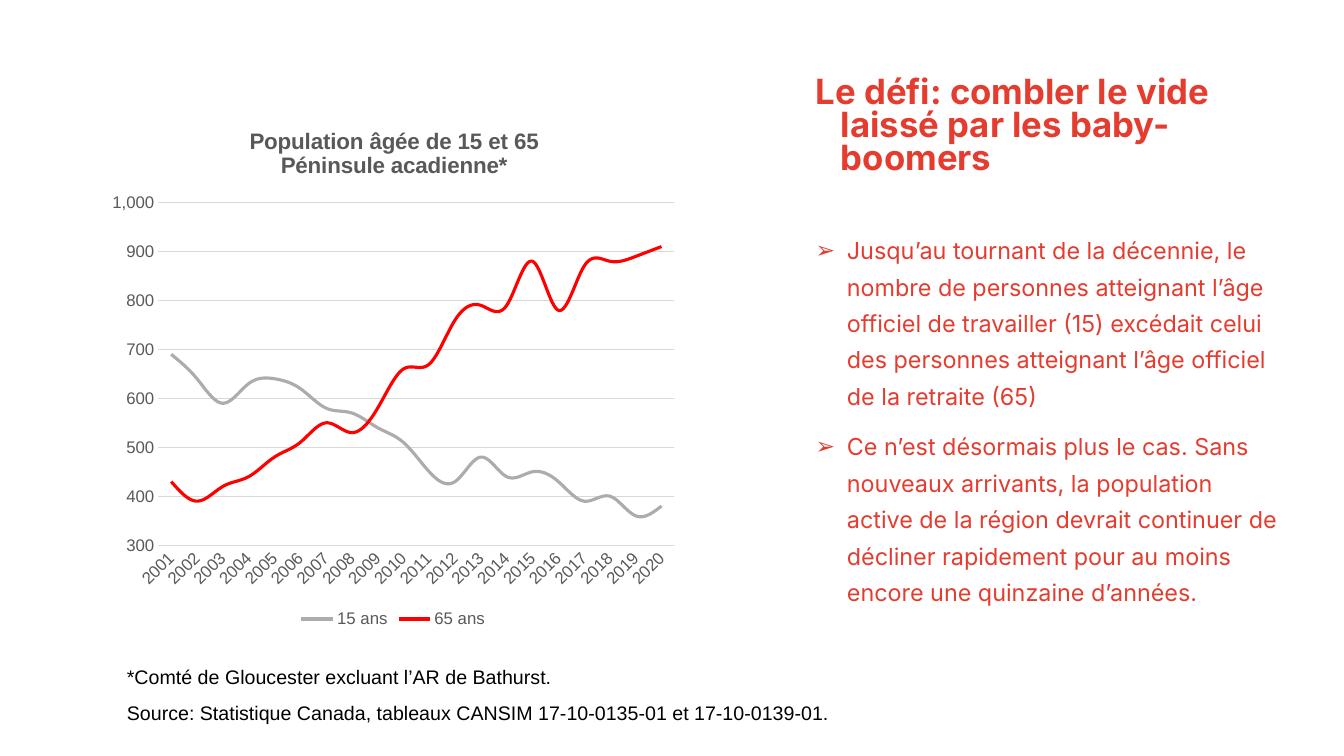
"""Build a slide on the ageing of the Péninsule acadienne: a line chart beside two comments."""
from dataclasses import dataclass

import pptx
import pptx.chart.data
import pptx.dml.color
import pptx.enum.chart
import pptx.enum.text
import pptx.oxml
import pptx.oxml.ns
import pptx.util

EMU_PER_PX = 9144
COLORS = {
    "accent": "E43D30",
    "note": "000000",
    "label": "595959",
    "grid": "D9D9D9",
    "young": "AFABAB",
    "senior": "FF0000",
}


@dataclass(frozen=True)
class Box:
    left: int
    top: int
    width: int
    height: int


@dataclass(frozen=True)
class Style:
    font: str
    size: float
    color: str
    bold: bool = False
    spacing: float = 1.0
    margin: int = 0
    indent: int = 0
    bullet: str = ""


@dataclass(frozen=True)
class Series:
    name: str
    color: str
    values: tuple[int, ...]


@dataclass(frozen=True)
class Note:
    box: Box
    text: str


TITLE_BOX = Box(774, 72, 509, 130)
LIST_BOX = Box(774, 221, 509, 433)
CHART_BOX = Box(99, 108, 582, 519)
PLOT_BOX = Box(157, 201, 512, 340)

TITLE_STYLE = Style("Inter", 24.8, "accent", bold=True, spacing=0.8, margin=50, indent=-25)
LIST_STYLE = Style("Inter", 16.7, "accent", spacing=1.3, margin=56, indent=-31, bullet="➢")
NOTE_STYLE = Style("Arial", 14, "note")
AXIS_STYLE = Style("Arial", 12, "label")
CHART_TITLE_STYLE = Style("Arial", 16, "label", bold=True)

TITLE = "Le défi: combler le vide laissé par les baby-boomers"
COMMENTS = [
    "Jusqu’au tournant de la décennie, le nombre de personnes atteignant l’âge officiel "
    "de travailler (15) excédait celui des personnes atteignant l’âge officiel "
    "de la retraite (65)",
    "Ce n’est désormais plus le cas. Sans nouveaux arrivants, la population active de la "
    "région devrait continuer de décliner rapidement pour au moins encore une quinzaine "
    "d’années.",
]
CHART_TITLE = ["Population âgée de 15 et 65", "Péninsule acadienne*"]
YEARS = [str(year) for year in range(2001, 2021)]
SERIES = [
    Series("15 ans", "young", (690, 640, 590, 630, 640, 620, 580, 570, 540, 510,
                               450, 430, 480, 440, 450, 430, 390, 400, 360, 380)),
    Series("65 ans", "senior", (430, 390, 420, 440, 480, 510, 550, 530, 580, 660,
                                670, 760, 790, 790, 880, 780, 870, 880, 890, 910)),
]
NOTES = [
    Note(Box(116, 655, 696, 34), "*Comté de Gloucester excluant l’AR de Bathurst."),
    Note(Box(116, 690, 936, 34),
         "Source: Statistique Canada, tableaux CANSIM 17-10-0135-01 et 17-10-0139-01."),
]


def px(length: int) -> int:
    return pptx.util.Emu(length * EMU_PER_PX)


def place(box: Box) -> tuple[int, int, int, int]:
    return px(box.left), px(box.top), px(box.width), px(box.height)


def rgb(name: str) -> pptx.dml.color.RGBColor:
    return pptx.dml.color.RGBColor.from_string(COLORS[name])


def style_font(font, style: Style) -> None:
    font.name = style.font
    font.size = pptx.util.Pt(style.size)
    font.bold = style.bold
    font.color.rgb = rgb(style.color)


def add_bullet(properties, style: Style) -> None:
    namespace = pptx.oxml.ns.nsdecls("a")
    for markup in (
        f'<a:buClr {namespace}><a:srgbClr val="{COLORS[style.color]}"/></a:buClr>',
        f'<a:buFont {namespace} typeface="Arial"/>',
        f'<a:buChar {namespace} char="{style.bullet}"/>',
    ):
        properties.append(pptx.oxml.parse_xml(markup))


def write(frame, lines: list[str], style: Style) -> None:
    frame.text = "\n".join(lines)
    frame.word_wrap = True
    frame.auto_size = pptx.enum.text.MSO_AUTO_SIZE.NONE
    frame.vertical_anchor = pptx.enum.text.MSO_ANCHOR.TOP
    for number, para in enumerate(frame.paragraphs):
        properties = para._p.get_or_add_pPr()
        properties.set("marL", str(px(style.margin)))
        properties.set("indent", str(px(style.indent)))
        if style.bullet:
            add_bullet(properties, style)
        para.alignment = pptx.enum.text.PP_ALIGN.LEFT
        para.line_spacing = style.spacing
        para.space_before = pptx.util.Pt(10 if number else 0)
        for span in para.runs:
            style_font(span.font, style)


def fill_placeholder(shape, box: Box, lines: list[str], style: Style) -> None:
    shape.left, shape.top, shape.width, shape.height = place(box)
    write(shape.text_frame, lines, style)


def set_layout(parent, position: int, inner: bool = False, **fractions: float) -> None:
    for layout in parent.findall(pptx.oxml.ns.qn("c:layout")):
        parent.remove(layout)
    parts = '<c:layoutTarget val="inner"/>' if inner else ""
    parts += '<c:xMode val="edge"/><c:yMode val="edge"/>'
    parts += "".join(f'<c:{name} val="{value}"/>' for name, value in fractions.items())
    parent.insert(position, pptx.oxml.parse_xml(
        f'<c:layout {pptx.oxml.ns.nsdecls("c")}><c:manualLayout>{parts}'
        "</c:manualLayout></c:layout>"))


def style_line(line, color: str, width: float) -> None:
    line.color.rgb = rgb(color)
    line.width = pptx.util.Pt(width)


def draw_chart(page) -> None:
    data = pptx.chart.data.CategoryChartData(number_format="#,##0")
    data.categories = YEARS
    for series in SERIES:
        data.add_series(series.name, series.values)
    chart = page.shapes.add_chart(
        pptx.enum.chart.XL_CHART_TYPE.LINE, *place(CHART_BOX), data).chart
    style_font(chart.font, AXIS_STYLE)
    chart.plots[0].vary_by_categories = False
    for line, series in zip(chart.plots[0].series, SERIES):
        line.smooth = True
        line.marker.style = pptx.enum.chart.XL_MARKER_STYLE.NONE
        style_line(line.format.line, series.color, 2.25)

    frame = chart.chart_title.text_frame
    frame.text = "\n".join(CHART_TITLE)
    for para in frame.paragraphs:
        for span in para.runs:
            style_font(span.font, CHART_TITLE_STYLE)
    chart.chart_title.include_in_layout = False
    set_layout(chart.chart_title._element, 1, x=0.25, y=0.03)
    set_layout(chart._chartSpace.chart.plotArea, 0, inner=True,
               x=(PLOT_BOX.left - CHART_BOX.left) / CHART_BOX.width,
               y=(PLOT_BOX.top - CHART_BOX.top) / CHART_BOX.height,
               w=PLOT_BOX.width / CHART_BOX.width,
               h=PLOT_BOX.height / CHART_BOX.height)

    chart.has_legend = True
    chart.legend.position = pptx.enum.chart.XL_LEGEND_POSITION.BOTTOM
    chart.legend.include_in_layout = False
    style_font(chart.legend.font, AXIS_STYLE)

    years, counts = chart.category_axis, chart.value_axis
    for axis in (years, counts):
        axis.major_tick_mark = pptx.enum.chart.XL_TICK_MARK.NONE
        style_font(axis.tick_labels.font, AXIS_STYLE)
    style_line(years.format.line, "grid", 0.75)
    years._element.txPr.bodyPr.set("rot", "-2700000")
    counts.minimum_scale, counts.maximum_scale, counts.major_unit = 300, 1000, 100
    counts.format.line.fill.background()
    style_line(counts.major_gridlines.format.line, "grid", 0.75)
    counts.tick_labels.number_format = "#,##0"
    counts.tick_labels.number_format_is_linked = False


def main() -> None:
    deck = pptx.Presentation()
    deck.slide_width, deck.slide_height = px(1333), px(750)
    page = deck.slides.add_slide(deck.slide_layouts[1])
    fill_placeholder(page.shapes.title, TITLE_BOX, [TITLE], TITLE_STYLE)
    fill_placeholder(page.placeholders[1], LIST_BOX, COMMENTS, LIST_STYLE)
    draw_chart(page)
    for note in NOTES:
        write(page.shapes.add_textbox(*place(note.box)).text_frame, [note.text], NOTE_STYLE)
    deck.save("out.pptx")


if __name__ == "__main__":
    main()
